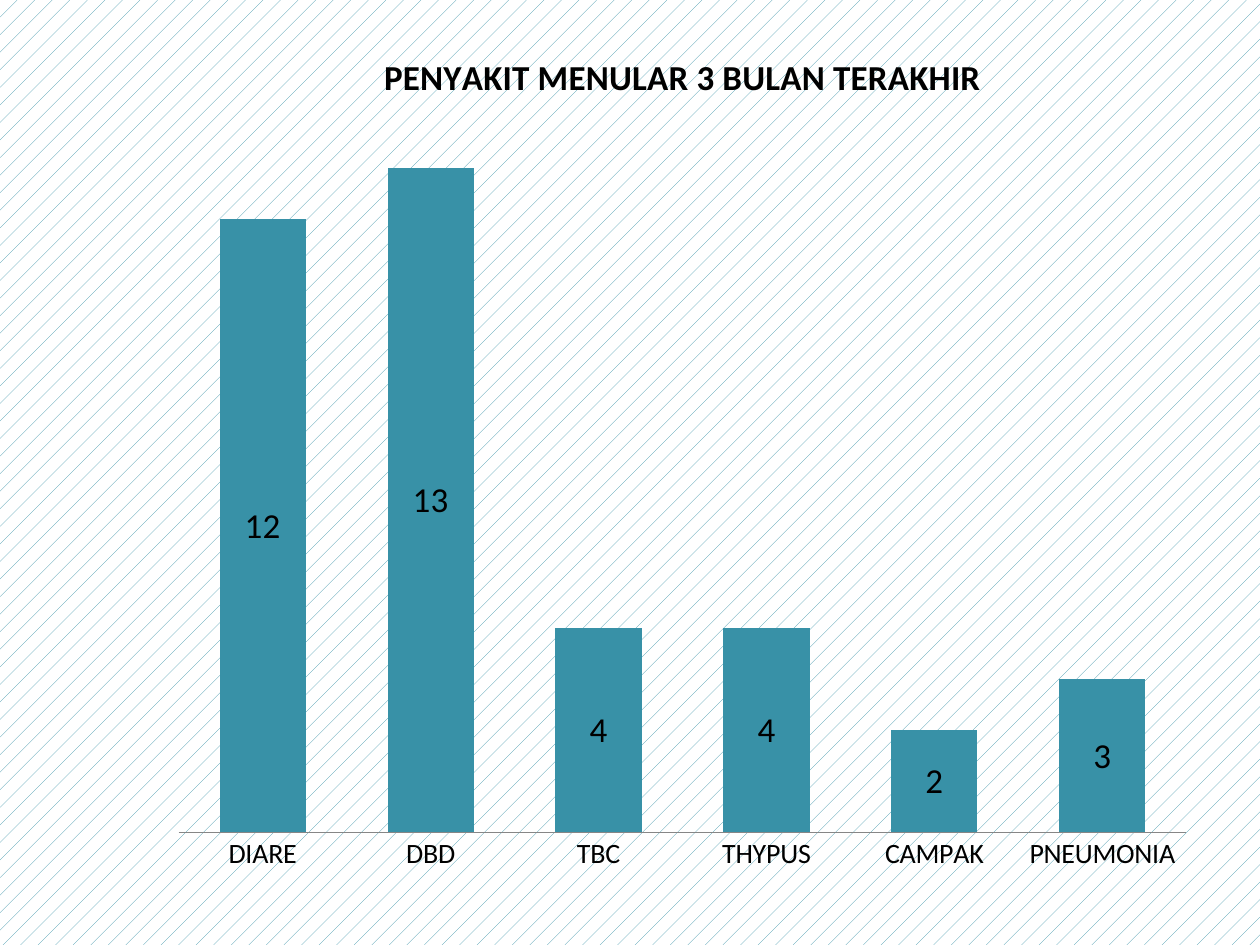
from dataclasses import dataclass

from lxml import etree
from pptx import Presentation
from pptx import util as u
from pptx.chart.data import CategoryChartData
from pptx.dml.color import RGBColor
from pptx.enum import chart as ch
from pptx.enum import dml
from pptx.oxml.ns import qn


@dataclass(frozen=True)
class Theme:
    teal = RGBColor(0x38, 0x91, 0xA7)
    white = RGBColor(0xFF, 0xFF, 0xFF)
    black = RGBColor(0, 0, 0)
    grey = RGBColor(0x86, 0x86, 0x86)
    face = "Calibri"
    base_size = u.Pt(10)
    category_size = u.Pt(16)
    large_size = u.Pt(20)


theme = Theme()
cases = {"DIARE": 12, "DBD": 13, "TBC": 4, "THYPUS": 4, "CAMPAK": 2, "PNEUMONIA": 3}

deck = Presentation()
deck.slide_width, deck.slide_height = u.Cm(25.4), u.Cm(19.05)
slide = deck.slides.add_slide(deck.slide_layouts[6])

backdrop = slide.background.fill
backdrop.patterned()
backdrop.pattern = dml.MSO_PATTERN.PERCENT_5
backdrop.fore_color.rgb = theme.teal
backdrop.back_color.rgb = theme.white

# Chart of cases per disease
case_data = CategoryChartData(number_format="General")
case_data.categories = list(cases)
case_data.add_series("Series 1", list(cases.values()))
case_chart = slide.shapes.add_chart(
    ch.XL_CHART_TYPE.COLUMN_STACKED,
    u.Cm(3.18), u.Cm(0.43), u.Cm(21.16), u.Cm(17.58), case_data,
).chart
case_chart.has_legend = False
case_chart.font.name = theme.face
case_chart.font.size = theme.base_size
case_chart.font.color.rgb = theme.black

case_chart.has_title = True
heading = case_chart.chart_title.text_frame
heading.text = "PENYAKIT MENULAR 3 BULAN TERAKHIR"
heading_font = heading.paragraphs[0].font
heading_font.name = theme.face
heading_font.size = theme.large_size
heading_font.bold = True
heading_font.color.rgb = theme.black
case_chart.chart_title.include_in_layout = False

# Axes
diseases = case_chart.category_axis
diseases.major_tick_mark = ch.XL_TICK_MARK.NONE
diseases.tick_labels.font.size = theme.category_size
diseases.format.line.color.rgb = theme.grey
diseases.format.line.width = u.Pt(0.75)

counts = case_chart.value_axis
counts.minimum_scale, counts.maximum_scale = 0, 14
counts.has_major_gridlines = False
counts.visible = False

# Columns and their values
columns = case_chart.plots[0]
columns.gap_width = 95
columns.overlap = 100
columns.vary_by_categories = False
column_fill = columns.series[0].format.fill
column_fill.solid()
column_fill.fore_color.rgb = theme.teal

columns.has_data_labels = True
values = columns.data_labels
values.show_value = True
values.position = ch.XL_LABEL_POSITION.CENTER
values.font.size = theme.large_size
values.font.color.rgb = theme.black

# Fixed plot area, as fractions of the chart
plot_area = case_chart.element.find(".//" + qn("c:plotArea"))
for automatic in plot_area.findall(qn("c:layout")):
    plot_area.remove(automatic)
layout = etree.Element(qn("c:layout"))
plot_area.insert(0, layout)
manual = etree.SubElement(layout, qn("c:manualLayout"))
placement = {"layoutTarget": "inner", "xMode": "edge", "yMode": "edge",
             "x": 0.02, "y": 0.11, "w": 0.96, "h": 0.82}
for part, setting in placement.items():
    etree.SubElement(manual, qn(f"c:{part}")).set("val", str(setting))

deck.save("out.pptx")
